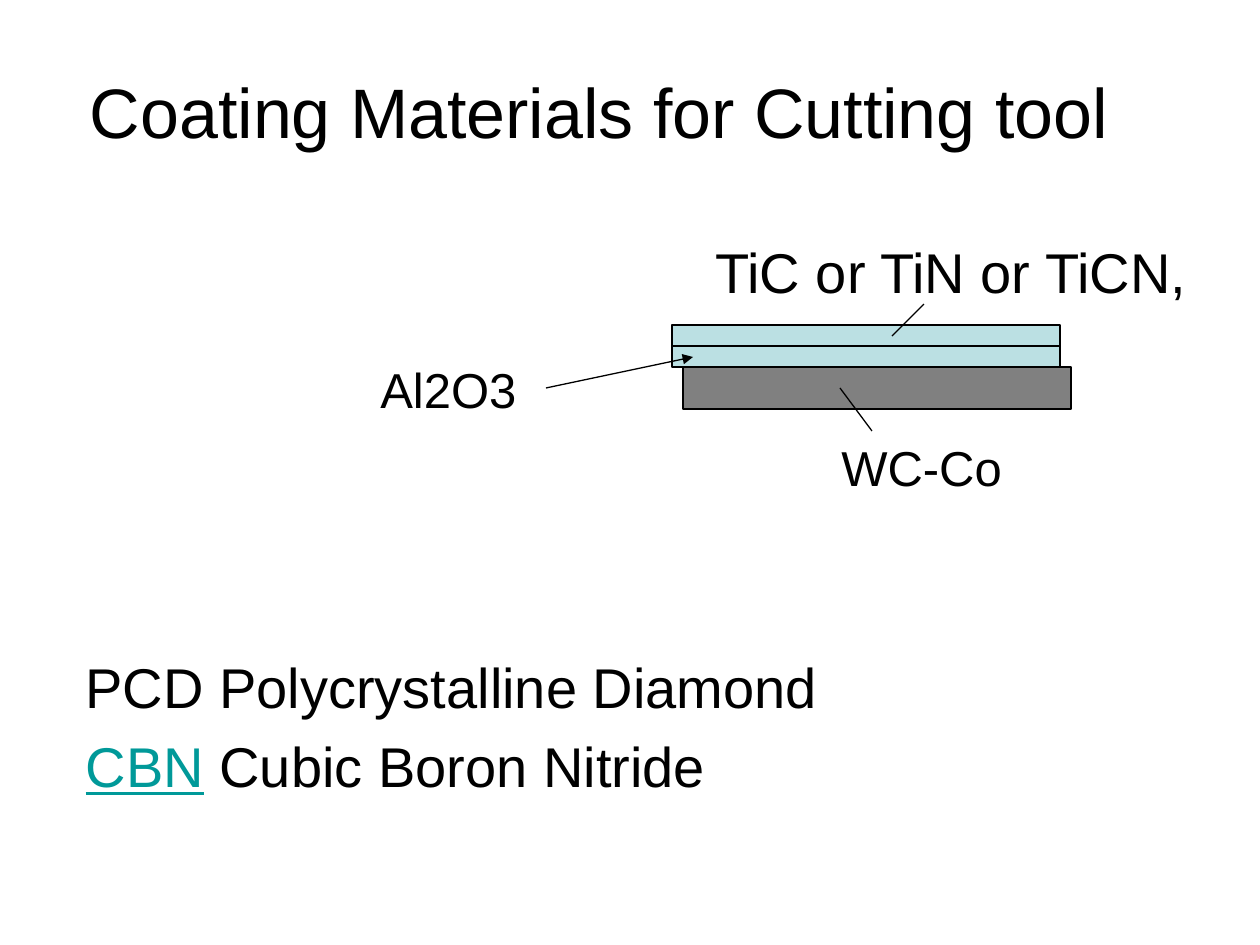
from dataclasses import dataclass

import pptx
import pptx.dml.color
import pptx.enum.shapes
import pptx.enum.text
import pptx.util
from pptx.oxml.ns import qn

PX = 914400 / 126  # EMU per px


@dataclass(frozen=True)
class Theme:
    font: str = "Arial"
    title_size: int = 40
    body_size: int = 32
    label_size: int = 28
    line_width: float = 0.75
    text: str = "000000"
    line: str = "000000"
    accent: str = "009999"
    coating: str = "BBE0E3"
    substrate: str = "808080"


THEME = Theme()


def px(length):
    return pptx.util.Emu(round(length * PX))


def rgb(code):
    return pptx.dml.color.RGBColor.from_string(code)


def place(shape, left, top, width, height):
    shape.left, shape.top = px(left), px(top)
    shape.width, shape.height = px(width), px(height)


def style(font, size):
    font.name = THEME.font
    font.size = pptx.util.Pt(size)
    font.color.rgb = rgb(THEME.text)


def style_line(line):
    line.color.rgb = rgb(THEME.line)
    line.width = pptx.util.Pt(THEME.line_width)


def fill_title(title, text):
    place(title, 32, 32, 1134, 158)
    title.text_frame.vertical_anchor = pptx.enum.text.MSO_ANCHOR.MIDDLE
    heading = title.text_frame.paragraphs[0]
    heading.text = text
    heading.alignment = pptx.enum.text.PP_ALIGN.CENTER
    style(heading.font, THEME.title_size)


def fill_materials(body, materials):
    """List each material as an abbreviation, its name and whether it is marked."""
    place(body, 73, 483, 966, 399)
    frame = body.text_frame
    frame.margin_top = px(169)
    for index, (abbreviation, name, marked) in enumerate(materials):
        item = frame.paragraphs[0] if index == 0 else frame.add_paragraph()
        item.space_before = pptx.util.Pt(7 if index else 0)
        style(item.font, THEME.body_size)
        properties = item._p.get_or_add_pPr()
        properties.set("marL", "0")
        properties.set("indent", "0")
        properties.insert_element_before(
            properties.makeelement(qn("a:buNone"), {}), "a:tabLst", "a:defRPr")
        if marked:
            term = item.add_run()
            term.text = abbreviation
            term.font.underline = True
            term.font.color.rgb = rgb(THEME.accent)
            item.add_run().text = f" {name}"
        else:
            item.add_run().text = f"{abbreviation} {name}"


def add_layer(shapes, left, top, width, height, color):
    layer = shapes.add_shape(pptx.enum.shapes.MSO_SHAPE.RECTANGLE,
                             px(left), px(top), px(width), px(height))
    layer.shadow.inherit = False
    layer.fill.solid()
    layer.fill.fore_color.rgb = rgb(color)
    style_line(layer.line)


def add_label(shapes, text, left, top, width, height, size, wrap=False):
    label = shapes.add_textbox(px(left), px(top), px(width), px(height))
    label.text_frame.word_wrap = wrap
    paragraph = label.text_frame.paragraphs[0]
    paragraph.text = text
    style(paragraph.font, size)


def add_pointer(shapes, start, end, arrow=False):
    pointer = shapes.add_connector(pptx.enum.shapes.MSO_CONNECTOR.STRAIGHT,
                                   *map(px, start + end))
    style_line(pointer.line)
    properties = pointer._element.spPr
    properties.append(properties.makeelement(qn("a:effectLst"), {}))
    if arrow:
        outline = pointer.line._get_or_add_ln()
        outline.append(outline.makeelement(qn("a:tailEnd"), {"type": "triangle"}))


def add_coating_diagram(slide):
    shapes = slide.shapes.add_group_shape().shapes

    # Two coatings on the substrate
    for top in (325, 346):
        add_layer(shapes, 672, top, 388, 21, THEME.coating)
    add_layer(shapes, 683, 367, 388, 42, THEME.substrate)

    # Labels and their pointers
    add_label(shapes, "WC-Co", 829, 431, 210, 72, THEME.label_size, wrap=True)
    add_pointer(shapes, (872, 431), (840, 388))
    add_label(shapes, "Al2O3", 368, 353, 161, 66, THEME.label_size)
    add_pointer(shapes, (546, 388), (693, 357), arrow=True)
    add_label(shapes, "TiC or TiN or TiCN,", 703, 231, 504, 79, THEME.body_size)
    add_pointer(shapes, (924, 304), (892, 336))


def main():
    deck = pptx.Presentation()
    deck.slide_width, deck.slide_height = px(1260), px(945)
    slide = deck.slides.add_slide(deck.slide_layouts[1])

    fill_title(slide.shapes.title, "Coating Materials for Cutting tool")
    fill_materials(slide.placeholders[1], [
        ("PCD", "Polycrystalline Diamond", False),
        ("CBN", "Cubic Boron Nitride", True),
    ])
    add_coating_diagram(slide)
    deck.save("out.pptx")


if __name__ == "__main__":
    main()
